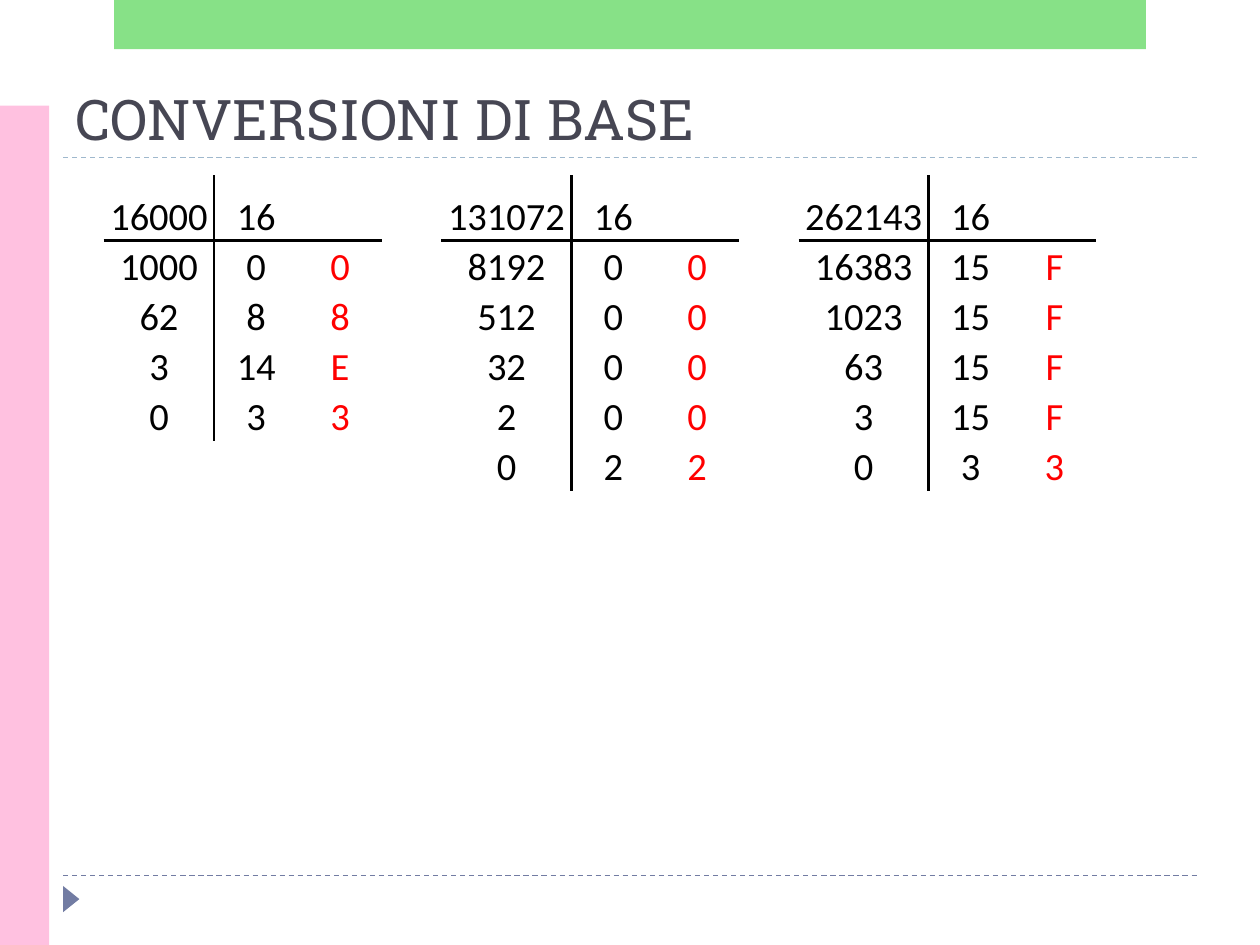
from lxml.etree import SubElement as Sub
from pptx import Presentation
from pptx.dml.color import RGBColor
from pptx.enum.dml import MSO_LINE_DASH_STYLE as Dash
from pptx.enum.shapes import MSO_CONNECTOR as Link, MSO_SHAPE as Form
from pptx.enum.text import MSO_ANCHOR as Anchor, PP_ALIGN as Align
from pptx.oxml.ns import qn
from pptx.util import Cm, Pt

BASE = 16
WIDE = 25.4
HIGH = 19.05


def tint(color, code):
    color.rgb = RGBColor.from_string(code)


def write(para, text, face, size, code):
    run = para.add_run()
    run.text = text
    run.font.name = face
    run.font.size = Pt(size)
    tint(run.font.color, code)


def block(slide, form, box, code, alpha=100):
    shape = slide.shapes.add_shape(form, *map(Cm, box))
    shape.shadow.inherit = False
    shape.line.fill.background()
    shape.fill.solid()
    tint(shape.fill.fore_color, code)
    if alpha < 100:
        color = shape.fill._xPr.find(".//" + qn("a:srgbClr"))
        Sub(color, qn("a:alpha"), val=str(alpha * 1000))
    return shape


def rule(slide, left, top, width, code):
    line = slide.shapes.add_connector(
        Link.STRAIGHT, Cm(left), Cm(top), Cm(left + width), Cm(top))
    line.line.width = Pt(0.75)
    line.line.dash_style = Dash.DASH
    tint(line.line.color, code)
    Sub(line._element.spPr, qn("a:effectLst"))


def frame(slide, left, top, width, height):
    inset = 1.27
    span = width - 2 * inset
    rule(slide, left + inset, top + 17.65, span, "727CA3")
    rule(slide, left + inset, top + 3.17, span, "9FB8CD")
    mark = block(slide, Form.ISOSCELES_TRIANGLE,
                 (left + 1.17, top + 17.96, 0.53, 0.33), "727CA3")
    mark.rotation = 90
    side = 2.13
    block(slide, Form.RECTANGLE, (left, top + side, 0.99, height - side), "FFC1E0")
    edge = 2.3
    block(slide, Form.RECTANGLE, (left + edge, top, width - 2 * edge, 0.99),
          "62D862", 76)


def title(slide, box, text):
    area = slide.shapes.add_textbox(*map(Cm, box)).text_frame
    area.word_wrap = True
    area.vertical_anchor = Anchor.BOTTOM
    write(area.paragraphs[0], text, "Roboto Slab", 32, "464653")


def border(cell, sides):
    props = cell._tc.get_or_add_tcPr()
    for spot, side in enumerate("LRTB"):
        line = Sub(props, qn("a:ln" + side), w=str(Pt(1.5)))
        if side in sides:
            fill = Sub(line, qn("a:solidFill"))
            Sub(fill, qn("a:srgbClr"), val="000000")
        else:
            Sub(line, qn("a:noFill"))
        props.insert(spot, line)


def steps(value):
    rows = [(str(value), str(BASE), "")]
    while value:
        value, rest = divmod(value, BASE)
        rows.append((str(value), str(rest), f"{rest:X}"))
    return rows


def division(slide, stem, top, first, value):
    rows = steps(value)
    cols = (first, 1.69, 1.69)
    highs = [1.32] + [1.01] * (len(rows) - 1)
    box = (stem - first, top, sum(cols), sum(highs))
    table = slide.shapes.add_table(len(rows), len(cols), *map(Cm, box)).table
    table.first_row = table.horz_banding = False
    for col, width in zip(table.columns, cols):
        col.width = Cm(width)
    for y, row in enumerate(rows):
        table.rows[y].height = Cm(highs[y])
        for x, text in enumerate(row):
            cell = table.cell(y, x)
            cell.fill.background()
            cell.vertical_anchor = Anchor.BOTTOM
            cell.margin_left = cell.margin_right = cell.margin_top = Cm(0.03)
            cell.margin_bottom = 0
            border(cell, ("R", "L", "")[x] + {0: "B", 1: "T"}.get(y, ""))
            para = cell.text_frame.paragraphs[0]
            para.alignment = Align.CENTER
            if text:
                write(para, text, "Calibri", 22, "FF0000" if x == 2 else "000000")


def main():
    deck = Presentation()
    deck.slide_width = Cm(WIDE)
    deck.slide_height = Cm(HIGH)
    slide = deck.slides.add_slide(deck.slide_layouts[6])
    frame(slide, 0, 0, WIDE, HIGH)
    title(slide, (1.27, 1.4, 22.86, 1.78), "CONVERSIONI DI BASE")
    sums = ((16000, 2.23), (131072, 2.62), (262143, 2.62))
    for spot, (value, first) in enumerate(sums):
        division(slide, 4.32 + 7.2 * spot, 3.53, first, value)
    deck.save("out.pptx")


if __name__ == "__main__":
    main()
